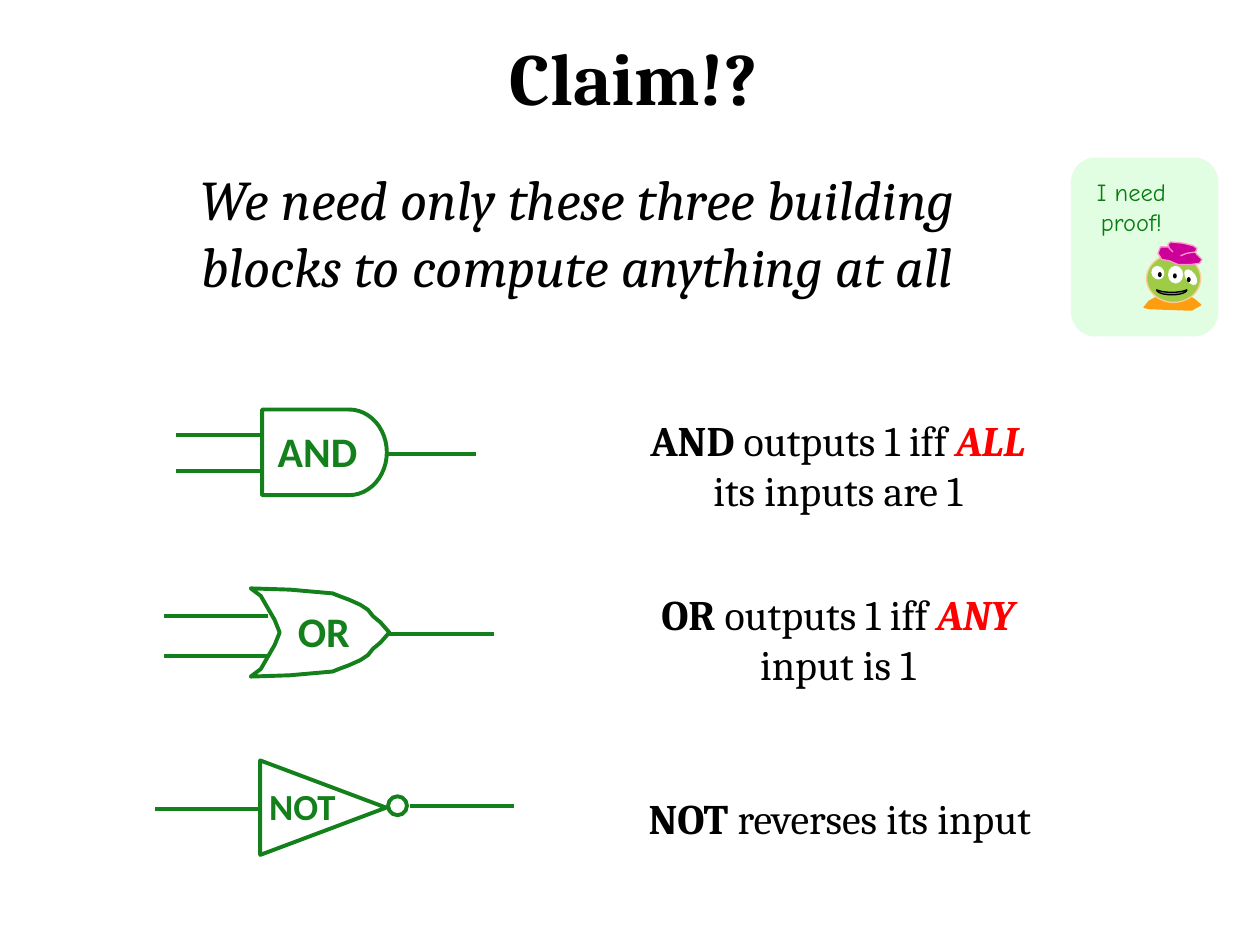
from math import cos, pi, sin

from lxml import etree
from pptx import Presentation
from pptx.dml.color import RGBColor
from pptx.enum.shapes import MSO_CONNECTOR, MSO_SHAPE
from pptx.enum.text import MSO_ANCHOR, MSO_AUTO_SIZE, PP_ALIGN
from pptx.oxml.ns import qn
from pptx.util import Inches, Pt

STRAIGHT = MSO_CONNECTOR.STRAIGHT
ROUNDED, OVAL = MSO_SHAPE.ROUNDED_RECTANGLE, MSO_SHAPE.OVAL
TRIANGLE, MOON = MSO_SHAPE.ISOSCELES_TRIANGLE, MSO_SHAPE.MOON
TOP, MIDDLE = MSO_ANCHOR.TOP, MSO_ANCHOR.MIDDLE
CENTER = PP_ALIGN.CENTER
NO_FIT = MSO_AUTO_SIZE.NONE

GREEN, BLACK, RED = "13801C", "000000", "FF0000"
SERIF, SANS, COMIC = "Cambria", "Calibri", "Comic Neue"

WIRES = [
    (1.4, 2.06, 3.45), (1.4, 2.06, 3.74), (3.07, 3.78, 3.6),
    (1.3, 2.13, 4.89), (1.3, 2.13, 5.21), (3.09, 3.92, 5.03),
    (1.23, 2.07, 6.42), (3.25, 4.08, 6.4),
]
GATE_LABELS = [
    ("AND", (2.1, 3.33, 0.84, 0.51), 24),
    ("OR", (2.26, 4.76, 0.62, 0.51), 24),
    ("NOT", (2.03, 6.17, 0.74, 0.45), 21),
]
RULES = [
    ((4.88, 3.24, 3.54, 0.91), "AND", " outputs 1 iff ", "ALL", " its inputs are 1"),
    ((4.88, 4.62, 3.54, 0.91), "OR", " outputs 1 iff ", "ANY ", "input is 1"),
    ((4.75, 6.24, 3.83, 0.51), "NOT", " reverses its input", "", ""),
]
OR_TOP = [
    (1.99, 4.67), (2.3, 4.68), (2.64, 4.71), (2.69, 4.73), (2.77, 4.76),
    (2.86, 4.8), (2.92, 4.84), (2.96, 4.89), (3.02, 4.94), (3.09, 5.02),
]
OR_BACK = [(2.22, 5.02), (2.18, 4.92), (2.07, 4.73)]
FEET = [
    (9.31, 2.33), (9.4, 2.34), (9.47, 2.37), (9.53, 2.42), (9.46, 2.46),
    (9.4, 2.46), (9.12, 2.45), (9.08, 2.44), (9.12, 2.39), (9.2, 2.35),
]
BERET_BRIM = [
    (9.3, 1.96), (9.21, 1.96), (9.19, 2.01), (9.22, 2.06), (9.28, 2.07),
    (9.35, 2.1), (9.45, 2.1), (9.52, 2.09), (9.54, 2.06), (9.49, 2.01),
]
BERET_TOP = [
    (9.31, 2), (9.28, 1.97), (9.27, 1.94), (9.29, 1.92), (9.39, 1.93),
    (9.47, 1.95), (9.5, 1.97), (9.49, 2), (9.42, 2.01), (9.37, 2.03),
]
EYES = [
    (9.14, 2.11, 0.1, 0.11, 327.2), (9.27, 2.11, 0.12, 0.14, 0),
    (9.41, 2.13, 0.08, 0.14, 325.5),
]
PUPILS = [(9.19, 2.16), (9.31, 2.17), (9.42, 2.2)]


def rgb(value):
    """Turn a hex string into a colour."""
    return RGBColor.from_string(value)


def paint(sp, fill=None, line=None, width=2.25):
    """Set fill and outline, either of which may be absent."""
    sp.shadow.inherit = False
    if fill:
        sp.fill.solid()
        sp.fill.fore_color.rgb = rgb(fill)
    else:
        sp.fill.background()
    if line:
        sp.line.color.rgb = rgb(line)
        sp.line.width = Pt(width)
    else:
        sp.line.fill.background()


def add_preset(s, kind, box, rotation=0, **colours):
    """Add a painted preset shape."""
    sp = s.shapes.add_shape(kind, *map(Inches, box))
    sp.rotation = rotation
    paint(sp, **colours)
    return sp


def add_outline(s, points, close=True, **colours):
    """Add a painted freeform through points in inches."""
    corners = [(Inches(x), Inches(y)) for x, y in points]
    builder = s.shapes.build_freeform(*corners[0], scale=1.0)
    builder.add_line_segments(corners[1:], close=close)
    paint(builder.convert_to_shape(), **colours)


def add_wire(s, left, right, y):
    """Add a horizontal gate wire."""
    wire = s.shapes.add_connector(
        STRAIGHT, Inches(left), Inches(y), Inches(right), Inches(y))
    wire.line.color.rgb = rgb(GREEN)
    wire.line.width = Pt(2.25)
    etree.SubElement(wire._element.spPr, qn("a:effectLst"))


def write(sp, runs, wrap=True, anchor=TOP):
    """Write one centred paragraph of (text, format) runs."""
    tf = sp.text_frame
    settings = {"word_wrap": wrap, "auto_size": NO_FIT, "vertical_anchor": anchor}
    for name, value in settings.items():
        setattr(tf, name, value)
    p = tf.paragraphs[0]
    p.alignment = CENTER
    for text, style in runs:
        r = p.add_run()
        r.text = text
        style = dict(style)
        r.font.color.rgb = rgb(style.pop("color", BLACK))
        for name, value in style.items():
            setattr(r.font, name, value)


def add_text(s, box, runs, **options):
    """Add a text box holding the given runs."""
    write(s.shapes.add_textbox(*map(Inches, box)), runs, **options)


def add_title(s):
    """Place and format the title."""
    title = s.shapes.title
    box = dict(left=1.07, top=0.2, width=7.92, height=0.8)
    for name, value in box.items():
        setattr(title, name, Inches(value))
    write(title, [("Claim!?", dict(name=SERIF, size=Pt(42), bold=True))])


def add_proof_card(s):
    """Add the card with the creature asking for proof."""
    add_preset(s, ROUNDED, (8.5, 1.25, 1.17, 1.42), fill="E2FEE2")
    add_outline(s, FEET, fill="FD9D0F", line="FD9D0F", width=0.75)
    add_preset(s, OVAL, (9.1, 2.02, 0.43, 0.38),
               fill="9ECC46", line="FFCC99", width=0.75)
    for *box, rotation in EYES:
        add_preset(s, OVAL, box, rotation, fill="FFFFFF")
    for x, y in PUPILS:
        add_preset(s, OVAL, (x, y, 0.03, 0.04), fill=BLACK)
    add_preset(s, MOON, (9.28, 2.2, 0.04, 0.24), 270,
               fill="808080", line=BLACK, width=0.75)
    for points in (BERET_BRIM, BERET_TOP):
        add_outline(s, points, close=False, fill="CC0099", line="FF99CC", width=0.75)
    add_text(s, (8.53, 1.36, 0.9, 0.57),
             [("I need proof!", dict(name=COMIC, size=Pt(14), color="067B0E"))])


def add_gates(s):
    """Add the three logic gates with wires and labels."""
    angles = [pi * (i / 24 - 0.5) for i in range(25)]
    nose = [(2.77 + 0.3 * cos(a), 3.59 + 0.34 * sin(a)) for a in angles]
    add_outline(s, [(2.08, 3.25), *nose, (2.08, 3.93)], line=GREEN)

    half = OR_BACK + OR_TOP
    mirrored = [(x, 10.04 - y) for x, y in reversed(half)]
    add_outline(s, half + mirrored, line=GREEN)

    add_preset(s, TRIANGLE, (2.19, 5.91, 0.75, 1), 90, line=GREEN)
    add_preset(s, OVAL, (3.08, 6.32, 0.15, 0.15), line=GREEN)
    for wire in WIRES:
        add_wire(s, *wire)
    for text, box, size in GATE_LABELS:
        style = dict(name=SANS, size=Pt(size), bold=True, color=GREEN)
        add_text(s, box, [(text, style)], wrap=False)


def add_rules(s):
    """Add the sentence that explains each gate."""
    plain = dict(name=SERIF, size=Pt(24))
    bold = dict(plain, bold=True)
    styles = (bold, plain, dict(bold, italic=True, color=RED), plain)
    for box, *texts in RULES:
        add_text(s, box, [pair for pair in zip(texts, styles) if pair[0]])


def main():
    """Build and save the slide."""
    prs = Presentation()
    prs.slide_width, prs.slide_height = Inches(10), Inches(7.5)
    s = prs.slides.add_slide(prs.slide_layouts[5])
    add_title(s)
    add_proof_card(s)
    claim = "We need only these three building blocks to compute anything at all"
    add_text(s, (1.25, 1.25, 6.67, 1.18),
             [(claim, dict(name=SERIF, size=Pt(32), italic=True))], anchor=MIDDLE)
    add_gates(s)
    add_rules(s)
    prs.save("out.pptx")


if __name__ == "__main__":
    main()
